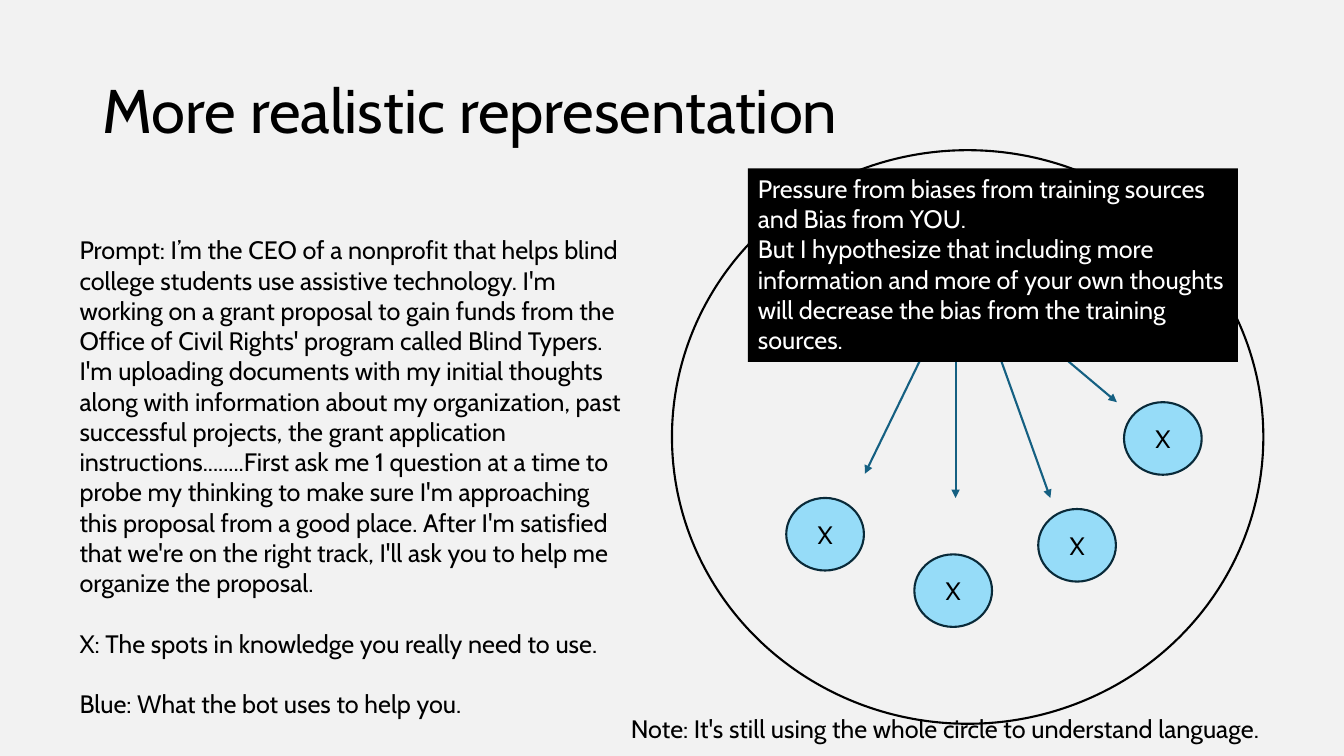
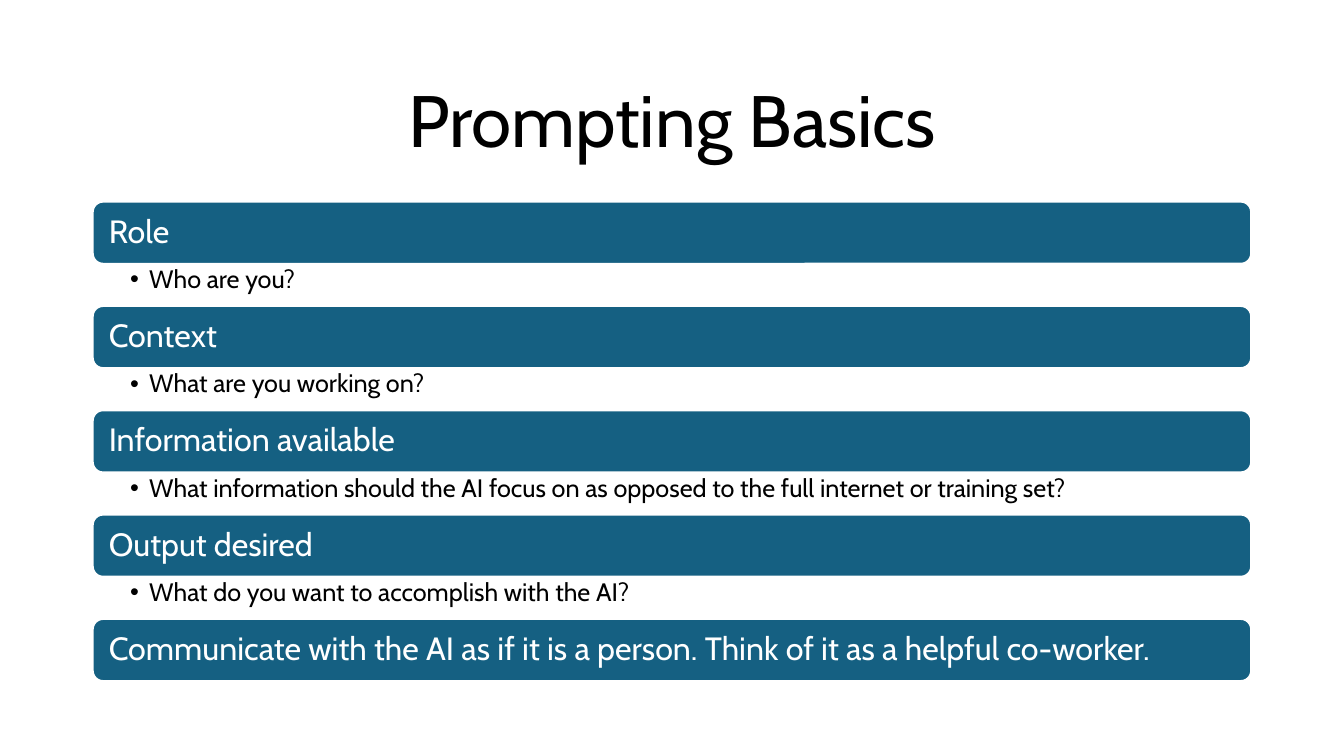
from dataclasses import dataclass

from pptx import Presentation
from pptx.dml.color import RGBColor
from pptx.enum.shapes import MSO_CONNECTOR, MSO_SHAPE
from pptx.enum.text import MSO_ANCHOR, PP_ALIGN
from pptx.oxml.ns import qn
from pptx.shapes.autoshape import Shape
from pptx.slide import Slide
from pptx.text.text import TextFrame
from pptx.util import Inches, Length, Pt
from lxml import etree

OVAL, RECTANGLE, ROUNDED = MSO_SHAPE.OVAL, MSO_SHAPE.RECTANGLE, MSO_SHAPE.ROUNDED_RECTANGLE
STRAIGHT = MSO_CONNECTOR.STRAIGHT
TOP, MIDDLE = MSO_ANCHOR.TOP, MSO_ANCHOR.MIDDLE
LEFT, CENTER = PP_ALIGN.LEFT, PP_ALIGN.CENTER

BLACK = RGBColor(0x00, 0x00, 0x00)
WHITE = RGBColor(0xFF, 0xFF, 0xFF)
PALE_GREY = RGBColor(0xF2, 0xF2, 0xF2)
SKY = RGBColor(0x96, 0xDC, 0xF8)
NAVY = RGBColor(0x09, 0x2A, 0x39)
TEAL = RGBColor(0x15, 0x60, 0x82)

FONT = "Cabin"
BODY_SIZE = 18
LINE_WIDTH = Pt(1.5)
TIGHT = 0.9
SLIDE_WIDTH, SLIDE_HEIGHT = Inches(13.33), Inches(7.5)
MARGIN, CONTENT_WIDTH = 6.9, 86.2  # percent of the slide width


@dataclass(frozen=True)
class Box:
    """A rectangle in percent of the slide's width and height."""
    left: float
    top: float
    width: float
    height: float

    def emu(self) -> tuple[Length, Length, Length, Length]:
        return across(self.left), down(self.top), across(self.width), down(self.height)


@dataclass(frozen=True)
class Arrow:
    """Start and end points in percent of the slide's width and height."""
    x1: float
    y1: float
    x2: float
    y2: float


@dataclass(frozen=True)
class TextStyle:
    size: float = BODY_SIZE
    color: RGBColor = BLACK
    align: PP_ALIGN = LEFT
    anchor: MSO_ANCHOR = TOP
    spacing: float = 1.0
    gap: float = 0  # points before every paragraph but the first
    insets: tuple[float, float, float, float] = (0.1, 0.05, 0.1, 0.05)


@dataclass(frozen=True)
class Step:
    heading: str
    question: str = ""


KNOWLEDGE = Box(50, 19.87, 44, 75.87)
SPOT_WIDTH, SPOT_HEIGHT = 5.78, 9.6
SPOTS = [(83.63, 53.2), (77.25, 67.33), (68.03, 73.33), (58.5, 65.87)]
ARROWS = [
    Arrow(69.68, 43.2, 64.35, 62.67),
    Arrow(71.1, 44.8, 71.1, 65.87),
    Arrow(73.88, 44.67, 78.15, 65.87),
    Arrow(75.53, 41.87, 83.1, 53.2),
]
PROMPT = [
    "Prompt: I’m the CEO of a nonprofit that helps blind college students use assistive "
    "technology. I'm working on a grant proposal to gain funds from the Office of Civil "
    "Rights' program called Blind Typers. I'm uploading documents with my initial thoughts "
    "along with information about my organization, past successful projects, the grant "
    "application instructions........First ask me 1 question at a time to probe my thinking "
    "to make sure I'm approaching this proposal from a good place. After I'm satisfied that "
    "we're on the right track, I'll ask you to help me organize the proposal.",
    "X: The spots in knowledge you really need to use.",
    "Blue: What the bot uses to help you.",
]
PRESSURE = [
    "Pressure from biases from training sources and Bias from YOU.",
    "But I hypothesize that including more information and more of your own thoughts "
    "will decrease the bias from the training sources.",
]
NOTE = "Note: It's still using the whole circle to understand language."

STEPS = [
    Step("Role", "Who are you?"),
    Step("Context", "What are you working on?"),
    Step("Information available",
         "What information should the AI focus on as opposed to the full internet "
         "or training set?"),
    Step("Output desired", "What do you want to accomplish with the AI?"),
    Step("Communicate with the AI as if it is a person. Think of it as a helpful co-worker."),
]
STEPS_TOP, STEP_PITCH, BAR_HEIGHT = 26.67, 13.8, 8.23

BODY = TextStyle()
PROMPT_STYLE = TextStyle(gap=21.6)
SPOT_STYLE = TextStyle(align=CENTER, anchor=MIDDLE)
PRESSURE_STYLE = TextStyle(color=WHITE)
HEADING_STYLE = TextStyle(size=23, color=WHITE, anchor=MIDDLE, spacing=TIGHT,
                          insets=(0.13, 0.1, 0.13, 0.1))
QUESTION_STYLE = TextStyle(spacing=TIGHT, insets=(0.37, 0.03, 0.18, 0.03))


def across(percent: float) -> Length:
    return Length(round(SLIDE_WIDTH * percent / 100))


def down(percent: float) -> Length:
    return Length(round(SLIDE_HEIGHT * percent / 100))


def write(frame: TextFrame, lines: list[str], style: TextStyle) -> None:
    frame.word_wrap = True
    frame.vertical_anchor = style.anchor
    (frame.margin_left, frame.margin_top,
     frame.margin_right, frame.margin_bottom) = map(Inches, style.insets)
    for index, line in enumerate(lines):
        paragraph = frame.add_paragraph() if index else frame.paragraphs[0]
        paragraph.alignment = style.align
        paragraph.line_spacing = style.spacing
        paragraph.space_before = Pt(style.gap if index else 0)
        run = paragraph.add_run()
        run.text = line
        run.font.name = FONT
        run.font.size = Pt(style.size)
        run.font.color.rgb = style.color


def add_text(slide: Slide, box: Box, lines: list[str], style: TextStyle = BODY) -> TextFrame:
    frame = slide.shapes.add_textbox(*box.emu()).text_frame
    write(frame, lines, style)
    return frame


def add_shape(slide: Slide, kind: MSO_SHAPE, box: Box, fill: RGBColor | None = None,
              line: RGBColor | None = None) -> Shape:
    shape = slide.shapes.add_shape(kind, *box.emu())
    shape.shadow.inherit = False
    if fill is None:
        shape.fill.background()
    else:
        shape.fill.solid()
        shape.fill.fore_color.rgb = fill
    if line is None:
        shape.line.fill.background()
    else:
        shape.line.color.rgb = line
        shape.line.width = LINE_WIDTH
    return shape


def add_arrow(slide: Slide, arrow: Arrow) -> None:
    connector = slide.shapes.add_connector(
        STRAIGHT, across(arrow.x1), down(arrow.y1), across(arrow.x2), down(arrow.y2))
    connector.line.color.rgb = TEAL
    connector.line.width = LINE_WIDTH
    etree.SubElement(connector.line._get_or_add_ln(), qn("a:tailEnd"), type="triangle")
    etree.SubElement(connector._element.spPr, qn("a:effectLst"))


def add_bullet(frame: TextFrame) -> None:
    """Give the first paragraph a hanging bullet."""
    properties = frame.paragraphs[0]._p.get_or_add_pPr()
    indent = Inches(0.19)
    properties.set("marL", str(indent))
    properties.set("indent", str(-indent))
    etree.SubElement(properties, qn("a:buFont"), typeface="Arial")
    etree.SubElement(properties, qn("a:buChar"), char="•")


def start_slide(deck: Presentation, background: RGBColor, title: str, title_box: Box,
                size: float, align: PP_ALIGN) -> Slide:
    slide = deck.slides.add_slide(deck.slide_layouts[6])
    slide.background.fill.solid()
    slide.background.fill.fore_color.rgb = background
    add_text(slide, title_box, [title],
             TextStyle(size=size, align=align, anchor=MIDDLE, spacing=TIGHT))
    return slide


def build_representation(deck: Presentation) -> None:
    slide = start_slide(deck, PALE_GREY, "More realistic representation",
                        Box(MARGIN, 5.33, CONTENT_WIDTH, 19.33), 44, LEFT)
    add_text(slide, Box(5.18, 30.4, 42.3, 66), PROMPT, PROMPT_STYLE)
    add_text(slide, Box(46.2, 93.73, 53.8, 5.33), [NOTE])
    add_shape(slide, OVAL, KNOWLEDGE, line=BLACK)
    for left, top in SPOTS:
        spot = add_shape(slide, OVAL, Box(left, top, SPOT_WIDTH, SPOT_HEIGHT), SKY, NAVY)
        write(spot.text_frame, ["X"], SPOT_STYLE)
    for arrow in ARROWS:
        add_arrow(slide, arrow)
    pressure = add_shape(slide, RECTANGLE, Box(55.65, 22.27, 36.45, 25.6), BLACK)
    write(pressure.text_frame, PRESSURE, PRESSURE_STYLE)


def build_basics(deck: Presentation) -> None:
    slide = start_slide(deck, WHITE, "Prompting Basics",
                        Box(MARGIN, 8.13, CONTENT_WIDTH, 16.53), 52, CENTER)
    for row, step in enumerate(STEPS):
        top = STEPS_TOP + row * STEP_PITCH
        bar = add_shape(slide, ROUNDED, Box(MARGIN, top, CONTENT_WIDTH, BAR_HEIGHT), TEAL, WHITE)
        write(bar.text_frame, [step.heading], HEADING_STYLE)
        if step.question:
            question_box = Box(MARGIN, top + BAR_HEIGHT, CONTENT_WIDTH, STEP_PITCH - BAR_HEIGHT)
            add_bullet(add_text(slide, question_box, [step.question], QUESTION_STYLE))


def main() -> None:
    deck = Presentation()
    deck.slide_width, deck.slide_height = SLIDE_WIDTH, SLIDE_HEIGHT
    build_representation(deck)
    build_basics(deck)
    deck.save("out.pptx")


if __name__ == "__main__":
    main()
